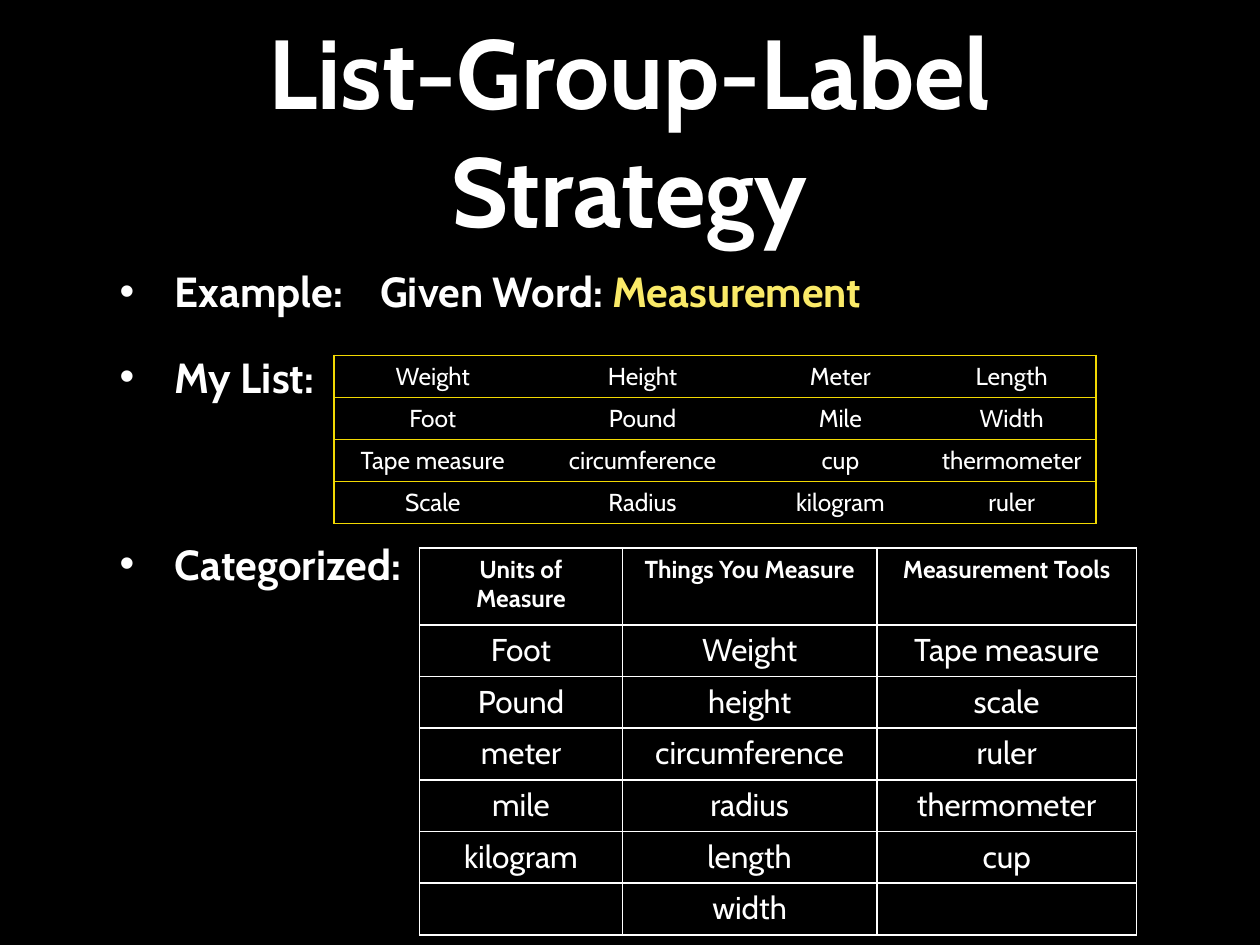
from lxml.etree import SubElement
from pptx import Presentation
from pptx.dml.color import RGBColor
from pptx.enum.text import MSO_ANCHOR, PP_ALIGN
from pptx.oxml.ns import qn
from pptx.util import Inches, Pt

FONT = "Cabin"
BLACK = RGBColor(0x00, 0x00, 0x00)
WHITE = RGBColor(0xFF, 0xFF, 0xFF)
PALE_YELLOW = RGBColor(0xFA, 0xEA, 0x68)
GOLD = RGBColor(0xF2, 0xD9, 0x02)

WORD_LIST = [
    ["Weight", "Height", "Meter", "Length"],
    ["Foot", "Pound", "Mile", "Width"],
    ["Tape measure", "circumference", "cup", "thermometer"],
    ["Scale", "Radius", "kilogram", "ruler"],
]
CATEGORIES = [
    ["Units of Measure", "Things You Measure", "Measurement Tools"],
    ["Foot", "Weight", "Tape measure"],
    ["Pound", "height", "scale"],
    ["meter", "circumference", "ruler"],
    ["mile", "radius", "thermometer"],
    ["kilogram", "length", "cup"],
    ["", "width", ""],
]


def style_font(font, size, bold=False, color=WHITE):
    font.name = FONT
    font.size = Pt(size)
    font.bold = bold
    font.color.rgb = color


def add_text_box(slide, left, top, width, height):
    tf = slide.shapes.add_textbox(
        Inches(left), Inches(top), Inches(width), Inches(height)).text_frame
    tf.word_wrap = True
    return tf


def add_title(slide, left, top, width, height):
    tf = add_text_box(slide, left, top, width, height)
    tf.vertical_anchor = MSO_ANCHOR.MIDDLE
    p = tf.paragraphs[0]
    p.text = "List-Group-Label Strategy"
    p.alignment = PP_ALIGN.CENTER
    style_font(p.runs[0].font, 56, bold=True)


def add_bullet(p, tab=None):
    """Give the paragraph a hanging bullet and, if asked, a tab stop in inches."""
    pPr = p._p.get_or_add_pPr()
    pPr.set("marL", str(Inches(0.44)))
    pPr.set("indent", str(-Inches(0.44)))
    SubElement(pPr, qn("a:buFont"), typeface="Arial")
    SubElement(pPr, qn("a:buChar"), char="•")
    if tab:
        tabs = SubElement(pPr, qn("a:tabLst"))
        SubElement(tabs, qn("a:tab"), pos=str(Inches(tab)), algn="l")


def add_steps(slide, left, top, width, height):
    tf = add_text_box(slide, left, top, width, height)
    steps = [
        ([("Example:\tGiven Word: ", WHITE), ("Measurement", PALE_YELLOW)], 0, 2.07),
        ([("My List:", WHITE)], 20, None),
        ([("Categorized:", WHITE)], 78, None),
    ]
    for i, (runs, space, tab) in enumerate(steps):
        p = tf.add_paragraph() if i else tf.paragraphs[0]
        add_bullet(p, tab)
        p.space_before = Pt(space)
        for text, color in runs:
            r = p.add_run()
            r.text = text
            style_font(r.font, 24, bold=True, color=color)


def set_borders(cell, color, sides):
    """Draw the named sides (L, R, T, B) and hide the others."""
    tcPr = cell._tc.get_or_add_tcPr()
    for side in "LRTB":
        ln = SubElement(tcPr, qn(f"a:ln{side}"), w=str(Pt(1)))
        if side in sides:
            fill = SubElement(ln, qn("a:solidFill"))
            SubElement(fill, qn("a:srgbClr"), val=str(color))
        else:
            SubElement(ln, qn("a:noFill"))


def add_word_table(slide, left, top, col_widths, row_heights, rows, color,
                   size, header_size=None, inner_verticals=True):
    table = slide.shapes.add_table(
        len(rows), len(col_widths), Inches(left), Inches(top),
        Inches(sum(col_widths)), Inches(sum(row_heights))).table
    table.first_row = table.horz_banding = False
    for col, width in zip(table.columns, col_widths):
        col.width = Inches(width)
    last = len(col_widths) - 1
    for i, words in enumerate(rows):
        table.rows[i].height = Inches(row_heights[i])
        is_header = bool(header_size) and i == 0
        for j, word in enumerate(words):
            cell = table.cell(i, j)
            sides = "TB"
            if inner_verticals or j == 0:
                sides += "L"
            if inner_verticals or j == last:
                sides += "R"
            set_borders(cell, color, sides)
            cell.fill.background()
            p = cell.text_frame.paragraphs[0]
            p.text = word
            p.alignment = PP_ALIGN.CENTER
            for item in (p, *p.runs):
                style_font(item.font, header_size if is_header else size, is_header)


def main():
    prs = Presentation()
    prs.slide_width, prs.slide_height = Inches(10), Inches(7.5)
    slide = prs.slides.add_slide(prs.slide_layouts[6])
    slide.background.fill.solid()
    slide.background.fill.fore_color.rgb = BLACK

    add_title(slide, 0.85, 0.12, 8.29, 1.81)
    add_steps(slide, 0.85, 2.06, 8.29, 4.32)
    add_word_table(slide, 2.65, 2.82, [1.57, 1.76, 1.38, 1.34], [0.33] * 4,
                   WORD_LIST, GOLD, 14, inner_verticals=False)
    add_word_table(slide, 3.33, 4.35, [1.61, 2.02, 2.06], [0.61] + [0.41] * 6,
                   CATEGORIES, WHITE, 18, header_size=14)
    prs.save("out.pptx")


if __name__ == "__main__":
    main()
